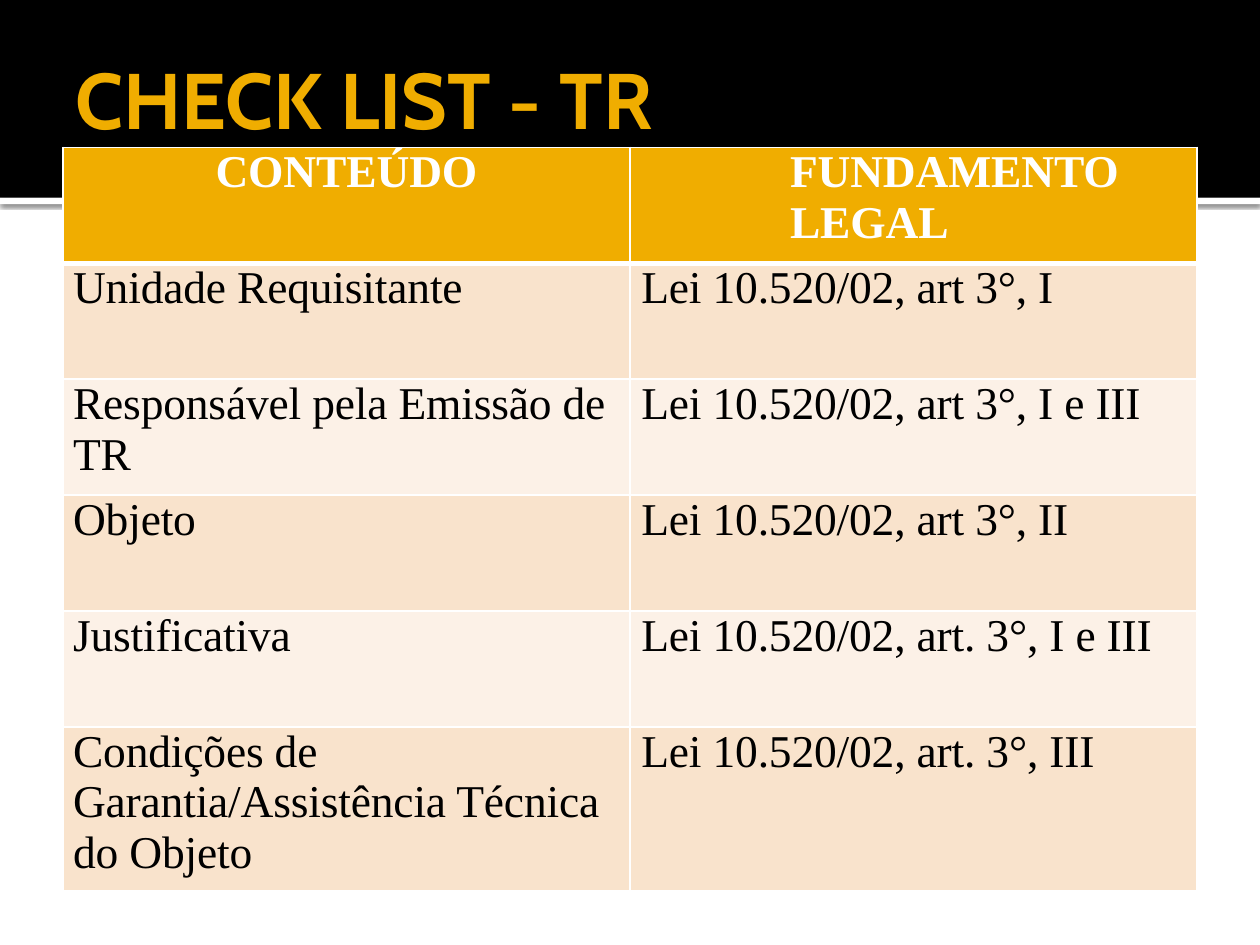
from lxml.etree import SubElement
from pptx import Presentation
from pptx.dml.color import RGBColor
from pptx.enum.shapes import MSO_SHAPE
from pptx.enum.text import MSO_ANCHOR, PP_ALIGN
from pptx.oxml.ns import qn
from pptx.util import Inches, Pt

COLORS = {"gold": "F0AD00", "black": "000000", "white": "FFFFFF",
          "dark_row": "F9E3CC", "light_row": "FCF1E7"}
HEADERS = ["CONTEÚDO", "FUNDAMENTO LEGAL"]
ROWS = [
    ("Unidade Requisitante", "Lei 10.520/02, art 3°, I"),
    ("Responsável pela Emissão de TR", "Lei 10.520/02, art 3°, I e III"),
    ("Objeto", "Lei 10.520/02, art 3°, II"),
    ("Justificativa", "Lei 10.520/02, art. 3°, I e III"),
    ("Condições de Garantia/Assistência Técnica do Objeto",
     "Lei 10.520/02, art. 3°, III"),
]


def rgb(name):
    return RGBColor.from_string(COLORS[name])


def write_text(frame, text, font="Times New Roman", size=26, color="black",
               bold=False, align=PP_ALIGN.LEFT, before=0, indent=0, spacing=0):
    para = frame.paragraphs[0]
    para.alignment = align
    para.space_before = Pt(before)
    para._p.get_or_add_pPr().set("marL", str(Inches(indent)))
    span = para.add_run()
    span.text = text
    span.font.name = font
    span.font.size = Pt(size)
    span.font.bold = bold
    span.font.color.rgb = rgb(color)
    if spacing:
        span.font._element.set("spc", str(round(spacing * 100)))


def add_band(page, top, height, color):
    band = page.shapes.add_shape(MSO_SHAPE.RECTANGLE, 0, Inches(top),
                                 Inches(10), Inches(height))
    band.shadow.inherit = False
    band.fill.solid()
    band.fill.fore_color.rgb = rgb(color)
    band.line.fill.background()
    return band


def add_shadow(shape, color, opacity, blur, distance):
    """Cast a soft shadow straight down."""
    effects = shape._element.spPr.find(qn("a:effectLst"))
    shadow = SubElement(effects, qn("a:outerShdw"), blurRad=str(Pt(blur)),
                        dist=str(Pt(distance)), dir="5400000",
                        algn="tl", rotWithShape="0")
    tint = SubElement(shadow, qn("a:srgbClr"), val=COLORS[color])
    SubElement(tint, qn("a:alpha"), val=str(opacity * 1000))


def add_title(page, text):
    box = page.shapes.add_textbox(Inches(0.5), Inches(0.3), Inches(9), Inches(0.95))
    frame = box.text_frame
    frame.word_wrap = True
    frame.vertical_anchor = MSO_ANCHOR.MIDDLE
    frame.margin_left = Inches(0.1)
    frame.margin_right = Inches(0.05)
    write_text(frame, text, font="Cabin", size=45, color="gold", bold=True)


def style_cell(cell, fill, bottom=1):
    cell.margin_left = cell.margin_right = cell.margin_top = cell.margin_bottom = 0
    properties = cell._tc.get_or_add_tcPr()
    for side, width in (("L", 1), ("R", 1), ("T", 1), ("B", bottom)):
        border = SubElement(properties, qn(f"a:ln{side}"), w=str(Pt(width)))
        paint = SubElement(border, qn("a:solidFill"))
        SubElement(paint, qn("a:srgbClr"), val=COLORS["white"])
    cell.fill.solid()
    cell.fill.fore_color.rgb = rgb(fill)


def add_checklist(page):
    holder = page.shapes.add_table(len(ROWS) + 1, 2, Inches(0.5), Inches(1.17),
                                   Inches(9), Inches(5.92))
    table = holder.table
    for row in table.rows:
        row.height = Inches(0.92)
    holder.height = Inches(5.92)

    # Header row
    layouts = [{"align": PP_ALIGN.CENTER}, {"indent": 1.27}]
    for column, (text, layout) in enumerate(zip(HEADERS, layouts)):
        cell = table.cell(0, column)
        style_cell(cell, "gold", bottom=3)
        write_text(cell.text_frame, text, color="white", bold=True,
                   before=1.9, spacing=-0.1, **layout)

    # Body rows in alternating tints
    for number, texts in enumerate(ROWS, start=1):
        fill = "dark_row" if number % 2 else "light_row"
        for column, text in enumerate(texts):
            cell = table.cell(number, column)
            style_cell(cell, fill)
            write_text(cell.text_frame, text, before=2.8, spacing=-0.1,
                       indent=(0.08, 0.09)[column])


def main():
    deck = Presentation()
    deck.slide_width, deck.slide_height = Inches(10), Inches(7.5)
    page = deck.slides.add_slide(deck.slide_layouts[6])
    page.background.fill.solid()
    page.background.fill.fore_color.rgb = rgb("white")

    # Top band with its shadowed edge
    edge = add_band(page, 1.57, 0.05, "white")
    add_shadow(edge, "black", opacity=60, blur=2.5, distance=0.8)
    add_band(page, 0, 1.57, "black")

    add_title(page, "CHECK LIST - TR")
    add_checklist(page)
    deck.save("out.pptx")


if __name__ == "__main__":
    main()
